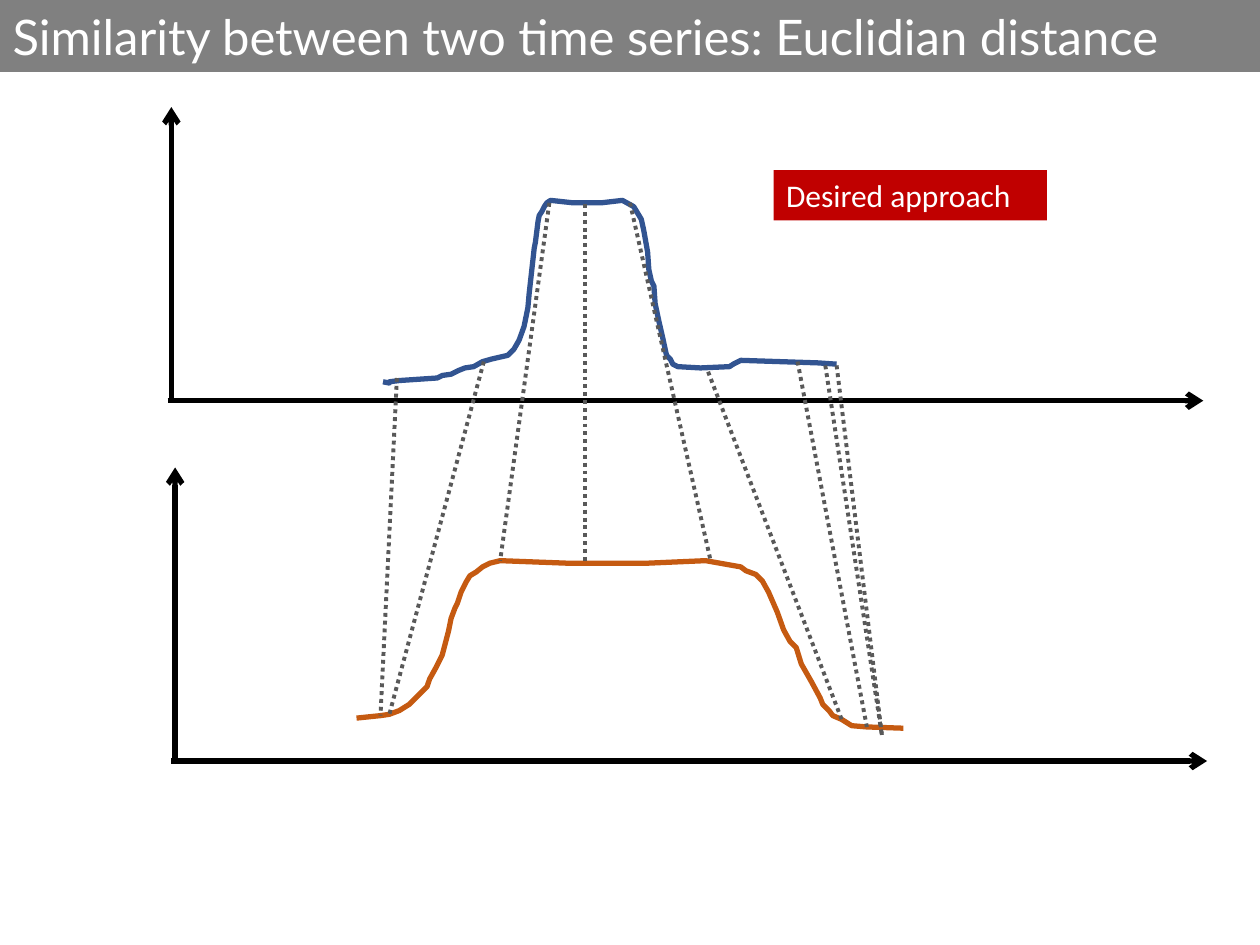
from dataclasses import dataclass

from lxml import etree
from pptx import Presentation
from pptx.dml.color import RGBColor
from pptx.enum.dml import MSO_LINE
from pptx.enum.shapes import MSO_CONNECTOR, MSO_SHAPE
from pptx.enum.text import MSO_ANCHOR, PP_ALIGN
from pptx.oxml.ns import qn
from pptx.util import Cm, Pt

WHITE = RGBColor(0xFF, 0xFF, 0xFF)
BLACK = RGBColor(0x00, 0x00, 0x00)
GREY = RGBColor(0x80, 0x80, 0x80)
DARK_GREY = RGBColor(0x59, 0x59, 0x59)
RED = RGBColor(0xC0, 0x00, 0x00)
BLUE = RGBColor(0x32, 0x54, 0x91)
ORANGE = RGBColor(0xC5, 0x5A, 0x11)

STRAIGHT = MSO_CONNECTOR.STRAIGHT
RECTANGLE = MSO_SHAPE.RECTANGLE
DOTTED = MSO_LINE.ROUND_DOT
MIDDLE = MSO_ANCHOR.MIDDLE
LEFT = PP_ALIGN.LEFT
CM_PER_UNIT = 2.54

Point = tuple[float, float]


@dataclass(frozen=True)
class Segment:
    start: Point
    end: Point


@dataclass(frozen=True)
class Series:
    color: RGBColor
    points: tuple[Point, ...]


AXES = (
    Segment((1.36, 3.17), (1.36, 0.85)),
    Segment((1.33, 3.18), (9.55, 3.18)),
    Segment((1.36, 6.04), (9.58, 6.04)),
    Segment((1.39, 6.04), (1.39, 3.71)),
)

MATCHES = (
    Segment((3.15, 3.0), (3.02, 5.68)),
    Segment((3.84, 2.87), (3.09, 5.67)),
    Segment((4.36, 1.61), (3.97, 4.45)),
    Segment((4.64, 1.62), (4.64, 4.45)),
    Segment((5.0, 1.61), (5.64, 4.45)),
    Segment((5.62, 2.95), (6.68, 5.71)),
    Segment((6.33, 2.87), (6.88, 5.77)),
    Segment((6.55, 2.9), (7.0, 5.84)),
    Segment((6.64, 2.9), (7.0, 5.84)),
)

NARROW_PEAK = Series(BLUE, (
    (3.04, 3.03), (3.09, 3.04), (3.09, 3.03), (3.17, 3.02), (3.47, 3.0),
    (3.51, 2.98), (3.58, 2.97), (3.64, 2.94), (3.69, 2.92), (3.76, 2.91),
    (3.83, 2.87), (3.9, 2.85), (4.03, 2.82), (4.08, 2.77), (4.12, 2.7),
    (4.16, 2.59), (4.19, 2.44), (4.2, 2.33), (4.22, 2.15), (4.24, 1.97),
    (4.25, 1.92), (4.27, 1.76), (4.28, 1.71), (4.3, 1.68), (4.32, 1.64),
    (4.34, 1.61), (4.37, 1.59), (4.55, 1.61), (4.77, 1.61), (4.94, 1.59),
    (5.03, 1.64), (5.09, 1.74), (5.11, 1.83), (5.14, 2.0), (5.15, 2.14),
    (5.17, 2.23), (5.19, 2.27), (5.2, 2.41), (5.23, 2.55), (5.26, 2.68),
    (5.29, 2.82), (5.32, 2.85), (5.34, 2.89), (5.38, 2.91), (5.56, 2.92),
    (5.79, 2.91), (5.82, 2.89), (5.88, 2.86), (6.49, 2.88), (6.64, 2.89),
))

WIDE_PEAK = Series(ORANGE, (
    (2.83, 5.7), (3.02, 5.68), (3.09, 5.67), (3.17, 5.64), (3.25, 5.59),
    (3.34, 5.5), (3.39, 5.45), (3.41, 5.39), (3.46, 5.3), (3.51, 5.2),
    (3.56, 5.01), (3.58, 4.91), (3.61, 4.83), (3.63, 4.79), (3.66, 4.7),
    (3.7, 4.62), (3.73, 4.57), (3.78, 4.54), (3.83, 4.5), (3.89, 4.47),
    (3.97, 4.45), (4.49, 4.47), (4.8, 4.47), (5.15, 4.47), (5.6, 4.45),
    (5.88, 4.5), (5.92, 4.53), (6.0, 4.56), (6.05, 4.61), (6.1, 4.7),
    (6.17, 4.86), (6.22, 5.0), (6.27, 5.09), (6.32, 5.14), (6.36, 5.27),
    (6.44, 5.41), (6.51, 5.54), (6.53, 5.59), (6.58, 5.64), (6.61, 5.68),
    (6.68, 5.71), (6.76, 5.76), (6.88, 5.77), (7.17, 5.78),
))


def length(units: float) -> Cm:
    return Cm(units * CM_PER_UNIT)


def place(shape, left: float, top: float, width: float, height: float) -> None:
    shape.left, shape.top = length(left), length(top)
    shape.width, shape.height = length(width), length(height)


def write_label(shape, wording: str, font: str, size: float, fill: RGBColor) -> None:
    shape.fill.solid()
    shape.fill.fore_color.rgb = fill
    frame = shape.text_frame
    frame.word_wrap = True
    frame.vertical_anchor = MIDDLE
    paragraph = frame.paragraphs[0]
    paragraph.alignment = LEFT
    run = paragraph.add_run()
    run.text = wording
    run.font.name = font
    run.font.size = Pt(size)
    run.font.color.rgb = WHITE


def draw_segment(shapes, segment: Segment, color: RGBColor, width: float):
    ends = [length(value) for value in segment.start + segment.end]
    connector = shapes.add_connector(STRAIGHT, *ends)
    connector.line.color.rgb = color
    connector.line.width = Pt(width)
    etree.SubElement(connector._element.spPr, qn("a:effectLst"))
    return connector


def draw_axis(shapes, axis: Segment) -> None:
    connector = draw_segment(shapes, axis, BLACK, 3)
    etree.SubElement(connector.line._get_or_add_ln(), qn("a:tailEnd"), type="arrow")


def draw_match(shapes, match: Segment) -> None:
    draw_segment(shapes, match, DARK_GREY, 2.25).line.dash_style = DOTTED


def draw_series(shapes, series: Series) -> None:
    start, *rest = [(length(x), length(y)) for x, y in series.points]
    builder = shapes.build_freeform(*start)
    builder.add_line_segments(rest, close=False)
    curve = builder.convert_to_shape()
    curve.shadow.inherit = False
    curve.fill.background()
    curve.line.color.rgb = series.color
    curve.line.width = Pt(3)


def main() -> None:
    presentation = Presentation()
    presentation.slide_width = length(10)
    presentation.slide_height = length(7.5)
    slide = presentation.slides.add_slide(presentation.slide_layouts[5])
    shapes = slide.shapes

    title = shapes.title
    place(title, 0, 0, 10, 0.57)
    write_label(title, "Similarity between two time series: Euclidian distance",
                "Lato", 28, GREY)

    for series in (NARROW_PEAK, WIDE_PEAK):
        draw_series(shapes, series)
    for axis in AXES:
        draw_axis(shapes, axis)
    for match in MATCHES:
        draw_match(shapes, match)

    approach = shapes.add_shape(RECTANGLE, 0, 0, 0, 0)
    place(approach, 6.14, 1.35, 2.17, 0.4)
    approach.shadow.inherit = False
    approach.line.fill.background()
    write_label(approach, "Desired approach", "Calibri", 18, RED)

    presentation.save("out.pptx")


if __name__ == "__main__":
    main()
